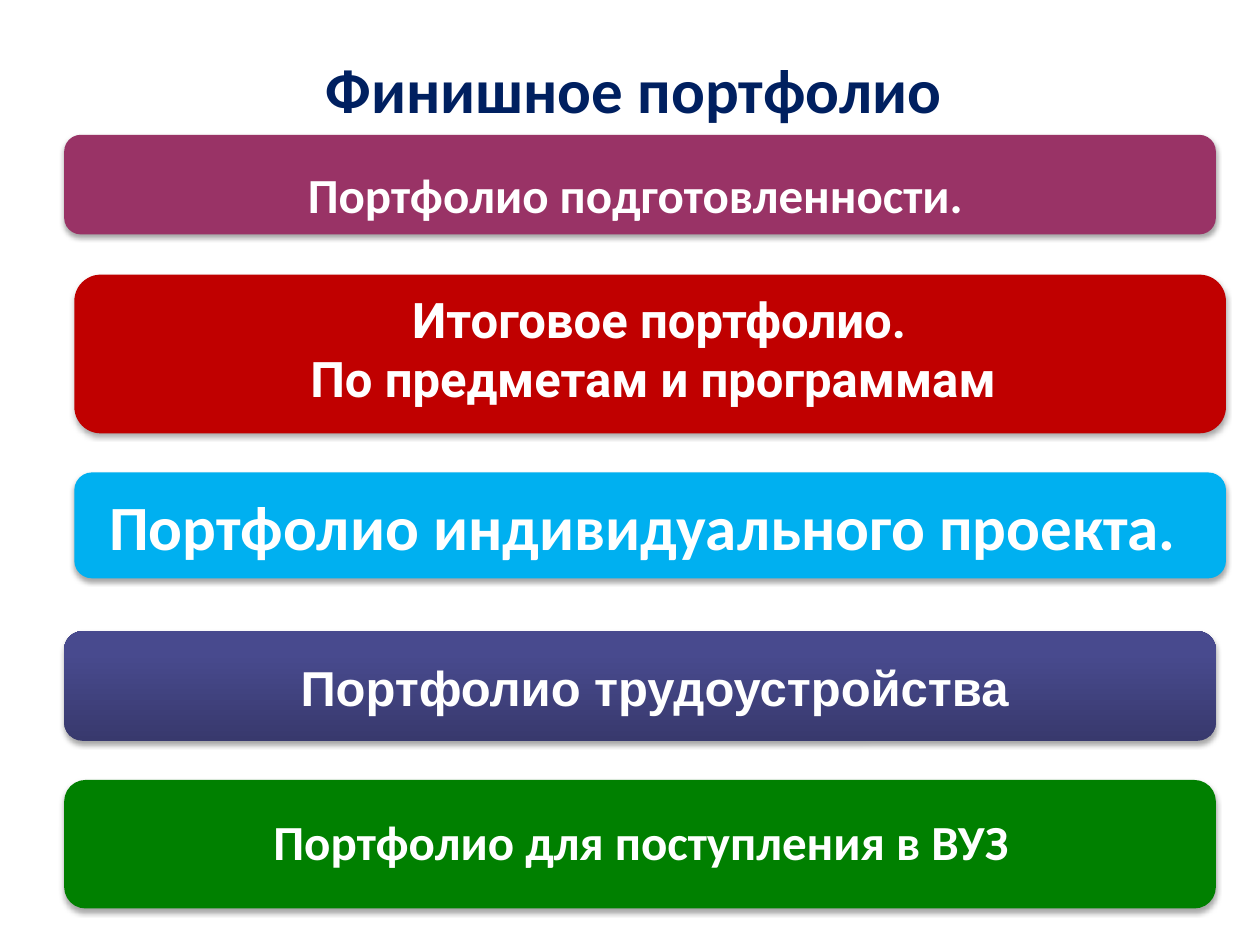
import copy

import pptx
import pptx.dml.color
import pptx.enum.shapes
import pptx.enum.text
import pptx.oxml
import pptx.oxml.ns
import pptx.util
from pptx.util import Inches

RGBColor = pptx.dml.color.RGBColor
WHITE = RGBColor(0xFF, 0xFF, 0xFF)
NAVY = RGBColor(0x00, 0x20, 0x60)
PLUM = RGBColor(0x99, 0x33, 0x66)
RED = RGBColor(0xC0, 0x00, 0x00)
SKY = RGBColor(0x00, 0xB0, 0xF0)
GREEN = RGBColor(0x00, 0x80, 0x00)
INDIGO_STOPS = [
    (0, RGBColor(0x38, 0x39, 0x6D)),
    (0.8, RGBColor(0x48, 0x4A, 0x8E)),
    (1, RGBColor(0x47, 0x49, 0x90)),
]

BAR_WIDTH = 9.14
BAR_LEFT = 0.51
SHIFTED_LEFT = 0.59
LABEL_LEFT = 0.55
LABEL_WIDTH = 9.07
MIDDLE = pptx.enum.text.MSO_ANCHOR.MIDDLE
TOP = pptx.enum.text.MSO_ANCHOR.TOP

SHADOW = (
    f'<a:effectLst {pptx.oxml.ns.nsdecls("a")}>'
    '<a:outerShdw blurRad="39370" dist="22860" dir="5400000" rotWithShape="0">'
    '<a:srgbClr val="000000"><a:alpha val="35000"/></a:srgbClr>'
    "</a:outerShdw></a:effectLst>"
)


def add_soft_shadow(shape):
    shape.shadow.inherit = False
    properties = shape._element.spPr
    empty_effects = properties.find(pptx.oxml.ns.qn("a:effectLst"))
    properties.replace(empty_effects, pptx.oxml.parse_xml(SHADOW))


def fill_gradient(shape, stops):
    """Fill from bottom to top with (position, colour) stops."""
    shape.fill.gradient()
    shape.fill.gradient_angle = 90
    stop_list = next(shape._element.spPr.iter(pptx.oxml.ns.qn("a:gsLst")))
    while len(stop_list) < len(stops):
        stop_list.append(copy.deepcopy(stop_list[-1]))
    for stop, (position, color) in zip(shape.fill.gradient_stops, stops):
        stop.position = position
        stop.color.rgb = color


def add_bar(slide, left, top, height, color=None):
    bar = slide.shapes.add_shape(
        pptx.enum.shapes.MSO_SHAPE.ROUNDED_RECTANGLE,
        Inches(left), Inches(top), Inches(BAR_WIDTH), Inches(height))
    if color is not None:
        bar.fill.solid()
        bar.fill.fore_color.rgb = color
    bar.line.fill.background()
    add_soft_shadow(bar)
    return bar


def write_lines(shape, lines, size, font_name="Calibri", color=WHITE,
                anchor=MIDDLE, wrap=True):
    """Write centred bold lines, one paragraph each."""
    frame = shape.text_frame
    frame.word_wrap = wrap
    frame.vertical_anchor = anchor
    for index, line in enumerate(lines):
        paragraph = frame.add_paragraph() if index else frame.paragraphs[0]
        paragraph.alignment = pptx.enum.text.PP_ALIGN.CENTER
        run = paragraph.add_run()
        run.text = line
        run.font.size = pptx.util.Pt(size)
        run.font.name = font_name
        run.font.bold = True
        run.font.color.rgb = color


def add_label(slide, left, top, width, height, lines, size=28, inset=None,
              **style):
    label = slide.shapes.add_textbox(
        Inches(left), Inches(top), Inches(width), Inches(height))
    write_lines(label, lines, size, **style)
    if inset is not None:
        frame = label.text_frame
        frame.margin_left = frame.margin_right = Inches(inset)
        frame.margin_top = frame.margin_bottom = Inches(inset)
    return label


def main():
    presentation = pptx.Presentation()
    presentation.slide_width = Inches(10)
    presentation.slide_height = Inches(7.5)
    slide = presentation.slides.add_slide(presentation.slide_layouts[6])

    add_label(slide, 0.78, 0.47, 8.5, 0.47, ["Финишное портфолио"],
              size=36, color=NAVY)

    add_bar(slide, BAR_LEFT, 1.07, 0.79, PLUM)
    add_label(slide, LABEL_LEFT, 1.14, LABEL_WIDTH, 0.8,
              ["Портфолио подготовленности. "], inset=0.12)

    add_bar(slide, SHIFTED_LEFT, 2.18, 1.26, RED)
    add_label(slide, 2.24, 2.25, 5.98, 1.04,
              ["Итоговое портфолио.", "По предметам и программам "],
              font_name="Roboto", anchor=TOP, wrap=False)

    project_bar = add_bar(slide, SHIFTED_LEFT, 3.75, 0.84, SKY)
    write_lines(project_bar, ["Портфолио индивидуального проекта. "], 36)

    employment_bar = add_bar(slide, BAR_LEFT, 5.01, 0.87)
    fill_gradient(employment_bar, INDIGO_STOPS)
    add_label(slide, 1.85, 5.17, 6.69, 0.57, ["Портфолио трудоустройства"],
              font_name="Arial", anchor=TOP)

    add_bar(slide, BAR_LEFT, 6.19, 1.02, GREEN)
    university_label = add_label(
        slide, LABEL_LEFT, 6.24, LABEL_WIDTH, 0.92,
        ["Портфолио для поступления в ВУЗ"], inset=0.12)
    university_label.text_frame.paragraphs[0].line_spacing = 0.9

    presentation.save("out.pptx")


if __name__ == "__main__":
    main()
